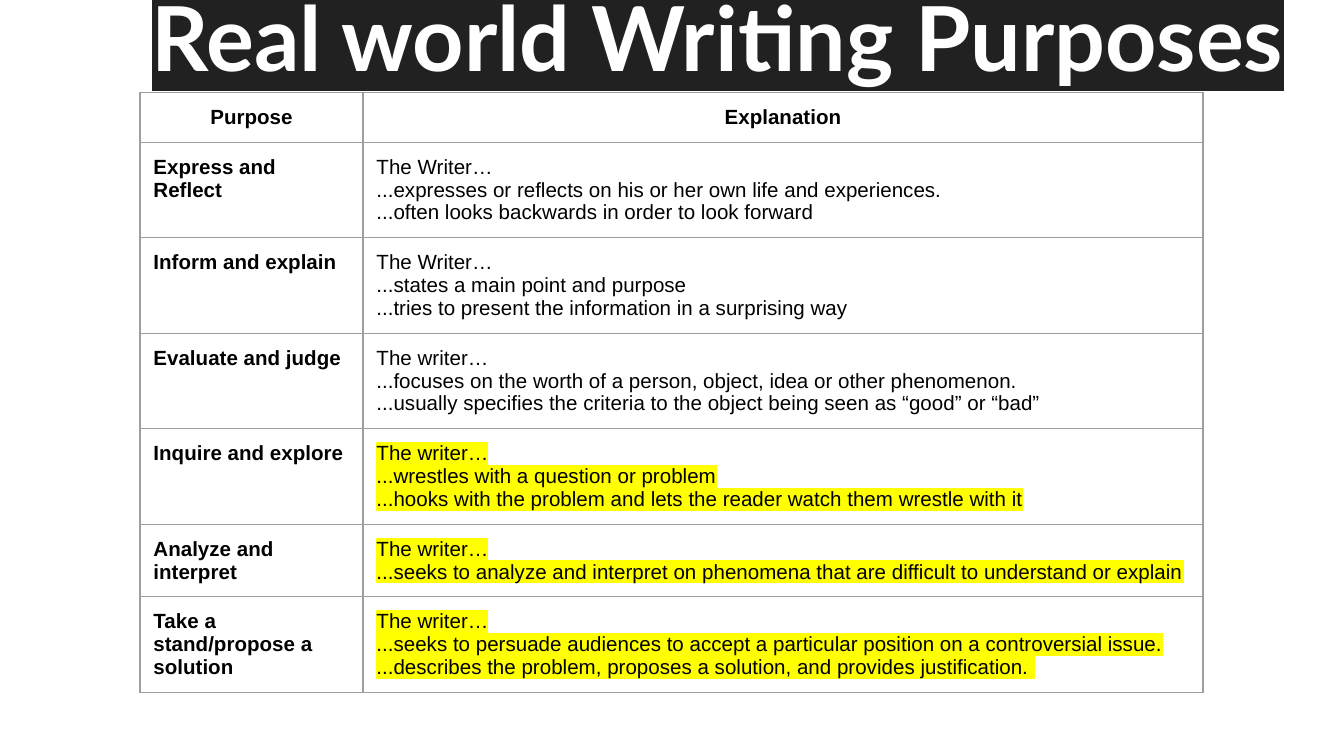
import pptx
import pptx.dml.color
import pptx.enum.text
import pptx.oxml
import pptx.oxml.ns
import pptx.util
from pptx.dml.color import RGBColor
from pptx.util import Pt

BLACK = RGBColor(0x00, 0x00, 0x00)
WHITE = RGBColor(0xFF, 0xFF, 0xFF)
CHARCOAL = RGBColor(0x21, 0x21, 0x21)
YELLOW = RGBColor(0xFF, 0xFF, 0x00)
GREY = RGBColor(0x9E, 0x9E, 0x9E)

PURPOSES = [
    ("Express and Reflect", None, [
        "The Writer…",
        "...expresses or reflects on his or her own life and experiences.",
        "...often looks backwards in order to look forward"]),
    ("Inform and explain", None, [
        "The Writer…",
        "...states a main point and purpose",
        "...tries to present the information in a surprising way"]),
    ("Evaluate and judge", None, [
        "The writer…",
        "...focuses on the worth of a person, object, idea or other phenomenon.",
        "...usually specifies the criteria to the object being seen as “good” or “bad”"]),
    ("Inquire and explore", YELLOW, [
        "The writer…",
        "...wrestles with a question or problem",
        "...hooks with the problem and lets the reader watch them wrestle with it"]),
    ("Analyze and interpret", YELLOW, [
        "The writer…",
        "...seeks to analyze and interpret on phenomena that are difficult to understand or explain"]),
    ("Take a stand/propose a solution", YELLOW, [
        "The writer…",
        "...seeks to persuade audiences to accept a particular position on a controversial issue.",
        "...describes the problem, proposes a solution, and provides justification. "]),
]


class PurposeSlide:
    title_font = "Lato"
    title_size = Pt(48)
    body_font = "Arial"
    body_size = Pt(11)
    inset = Pt(7.2)
    border_width = Pt(0.75)

    def __init__(self, deck):
        self.page = deck.slides.add_slide(deck.slide_layouts[5])
        self.page.background.fill.solid()
        self.page.background.fill.fore_color.rgb = WHITE

    def inset_text(self, holder):
        holder.margin_left = holder.margin_right = self.inset
        holder.margin_top = holder.margin_bottom = self.inset

    def paragraph(self, para, text, name, size, color, bold, centred, highlight=None):
        span = para.add_run()
        span.text = text
        para.font.name = name
        para.font.size = size
        para.font.bold = bold
        para.font.color.rgb = color
        align = pptx.enum.text.PP_ALIGN
        para.alignment = align.CENTER if centred else align.LEFT
        if highlight is not None:
            span.font._element.append(pptx.oxml.parse_xml(
                f'<a:highlight {pptx.oxml.ns.nsdecls("a")}>'
                f'<a:srgbClr val="{highlight}"/></a:highlight>'))

    def title(self, text, left, top, width, height):
        box = self.page.shapes.title
        box.left, box.top, box.width, box.height = left, top, width, height
        frame = box.text_frame
        frame.word_wrap = True
        frame.auto_size = pptx.enum.text.MSO_AUTO_SIZE.NONE
        frame.vertical_anchor = pptx.enum.text.MSO_ANCHOR.BOTTOM
        self.inset_text(frame)
        self.paragraph(frame.paragraphs[0], text, self.title_font, self.title_size,
                       WHITE, True, True, CHARCOAL)

    def cell(self, cell, lines, bold=False, centred=False, highlight=None):
        cell.fill.background()
        self.inset_text(cell)
        frame = cell.text_frame
        for index, line in enumerate(lines):
            para = frame.add_paragraph() if index else frame.paragraphs[0]
            self.paragraph(para, line, self.body_font, self.body_size, BLACK,
                           bold, centred, highlight)
        properties = cell._tc.get_or_add_tcPr()
        for index, side in enumerate(("lnL", "lnR", "lnT", "lnB")):
            properties.insert(index, pptx.oxml.parse_xml(
                f'<a:{side} {pptx.oxml.ns.nsdecls("a")} w="{self.border_width}">'
                f'<a:solidFill><a:srgbClr val="{GREY}"/></a:solidFill></a:{side}>'))

    def table(self, headings, rows, left, top, widths, heights):
        table = self.page.shapes.add_table(
            len(heights), len(widths), left, top, sum(widths), sum(heights)).table
        table.first_row = table.horz_banding = False
        for column, width in zip(table.columns, widths):
            column.width = width
        for row, height in zip(table.rows, heights):
            row.height = height
        for index, heading in enumerate(headings):
            self.cell(table.cell(0, index), [heading], bold=True, centred=True)
        for index, (purpose, highlight, lines) in enumerate(rows, start=1):
            self.cell(table.cell(index, 0), [purpose], bold=True)
            self.cell(table.cell(index, 1), lines, highlight=highlight)


def main():
    deck = pptx.Presentation()
    deck.slide_width, deck.slide_height = Pt(720), Pt(405)
    slide = PurposeSlide(deck)
    slide.title("Real world Writing Purposes", Pt(49), Pt(-100.8), Pt(671), Pt(156.2))
    line_height, padding = 12.25, 14.4
    line_counts = [1] + [len(lines) for _, _, lines in PURPOSES]
    heights = [Pt(count * line_height + padding) for count in line_counts]
    slide.table(("Purpose", "Explanation"), PURPOSES, Pt(75), Pt(49.5),
                [Pt(119.5), Pt(450)], heights)
    deck.save("out.pptx")


if __name__ == "__main__":
    main()
